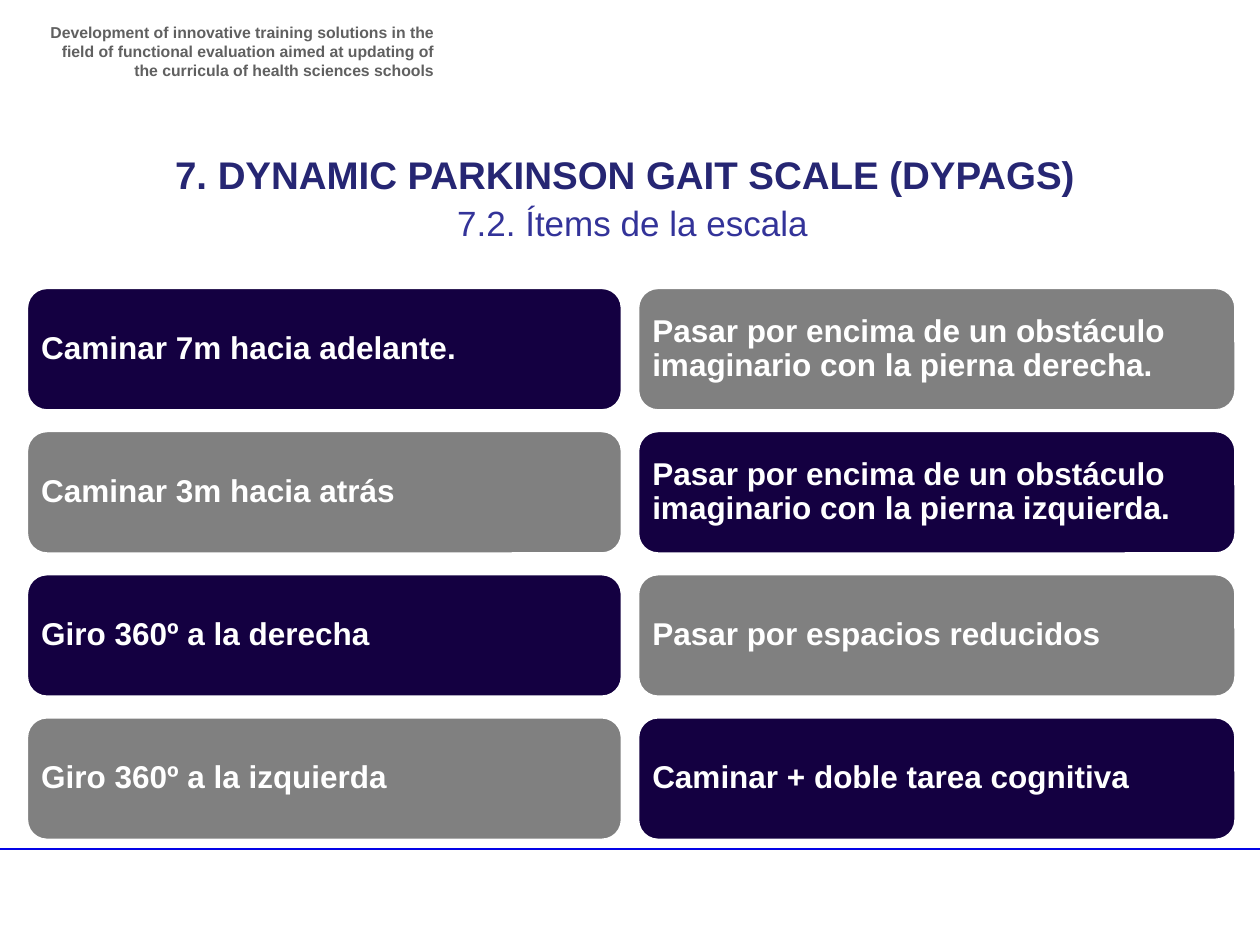
from dataclasses import dataclass

from lxml.etree import SubElement
from pptx import Presentation
from pptx.dml.color import RGBColor
from pptx.enum.shapes import MSO_CONNECTOR, MSO_SHAPE
from pptx.enum.text import MSO_ANCHOR, PP_ALIGN
from pptx.oxml.ns import qn
from pptx.slide import Slide
from pptx.util import Pt

COLORS = {
    "rule": "0404E6",
    "header": "606060",
    "title": "262673",
    "subtitle": "333399",
    "navy": "140041",
    "gray": "808080",
    "white": "FFFFFF",
}
FONT = "Arial"
CARD_TOP, CARD_HEIGHT, CARD_PITCH = 164.2, 70.6, 81.8
CARD_INSET = 5


@dataclass
class Label:
    text: str
    left: float
    top: float
    width: float
    height: float
    size: float
    color: str
    bold: bool
    align: PP_ALIGN


@dataclass
class Column:
    left: float
    width: float
    fills: tuple[str, str]
    items: list[str]


LABELS = [
    Label("Development of innovative training solutions in the ﬁeld of functional "
          "evaluation aimed at updating of the curricula of health sciences schools",
          20.2, 9.4, 234.7, 33.8, 9, "header", True, PP_ALIGN.RIGHT),
    Label("7. DYNAMIC PARKINSON GAIT SCALE (DYPAGS)",
          48.2, 82.8, 617.8, 33.8, 22, "title", True, PP_ALIGN.CENTER),
    Label("7.2. Ítems de la escala",
          254.2, 111.6, 220.3, 55.4, 20, "subtitle", False, PP_ALIGN.LEFT),
]

COLUMNS = [
    Column(15.1, 340.6, ("navy", "gray"), [
        "Caminar 7m hacia adelante.",
        "Caminar 3m hacia atrás",
        "Giro 360º a la derecha",
        "Giro 360º a la izquierda",
    ]),
    Column(364.3, 342, ("gray", "navy"), [
        "Pasar por encima de un obstáculo imaginario con la pierna derecha.",
        "Pasar por encima de un obstáculo imaginario con la pierna izquierda.",
        "Pasar por espacios reducidos",
        "Caminar + doble tarea cognitiva",
    ]),
]


def rgb(name: str) -> RGBColor:
    return RGBColor.from_string(COLORS[name])


def write_text(shape, text: str, size: float, color: str, bold: bool, align: PP_ALIGN):
    shape.text_frame.word_wrap = True
    paragraph = shape.text_frame.paragraphs[0]
    paragraph.text = text
    paragraph.alignment = align
    font = paragraph.font
    font.name, font.size, font.bold = FONT, Pt(size), bold
    font.color.rgb = rgb(color)
    return paragraph


def add_label(slide: Slide, label: Label) -> None:
    shape = slide.shapes.add_textbox(
        Pt(label.left), Pt(label.top), Pt(label.width), Pt(label.height))
    write_text(shape, label.text, label.size, label.color, label.bold, label.align)


def add_column(slide: Slide, column: Column) -> None:
    for row, text in enumerate(column.items):
        shape = slide.shapes.add_shape(
            MSO_SHAPE.ROUNDED_RECTANGLE, Pt(column.left),
            Pt(CARD_TOP + row * CARD_PITCH), Pt(column.width), Pt(CARD_HEIGHT))
        shape.shadow.inherit = False
        shape.fill.solid()
        shape.fill.fore_color.rgb = rgb(column.fills[row % 2])
        shape.line.color.rgb = rgb("white")
        shape.line.width = Pt(2)
        frame = shape.text_frame
        frame.vertical_anchor = MSO_ANCHOR.MIDDLE
        frame.margin_left = frame.margin_right = Pt(CARD_INSET)
        frame.margin_top = frame.margin_bottom = Pt(CARD_INSET)
        paragraph = write_text(shape, text, 18, "white", True, PP_ALIGN.LEFT)
        paragraph.line_spacing = 0.9


def add_rule(slide: Slide, left: float, right: float, top: float) -> None:
    connector = slide.shapes.add_connector(
        MSO_CONNECTOR.STRAIGHT, Pt(left), Pt(top), Pt(right), Pt(top))
    connector.line.color.rgb = rgb("rule")
    connector.line.width = Pt(1)
    SubElement(connector._element.spPr, qn("a:effectLst"))


def main() -> None:
    presentation = Presentation()
    presentation.slide_width, presentation.slide_height = Pt(720), Pt(540)
    slide = presentation.slides.add_slide(presentation.slide_layouts[6])

    # Footer rule
    add_rule(slide, -3.6, 720, 485.3)

    # Header, title and subtitle
    for label in LABELS:
        add_label(slide, label)

    # Scale items in two columns of alternating cards
    for column in COLUMNS:
        add_column(slide, column)

    presentation.save("out.pptx")


if __name__ == "__main__":
    main()
